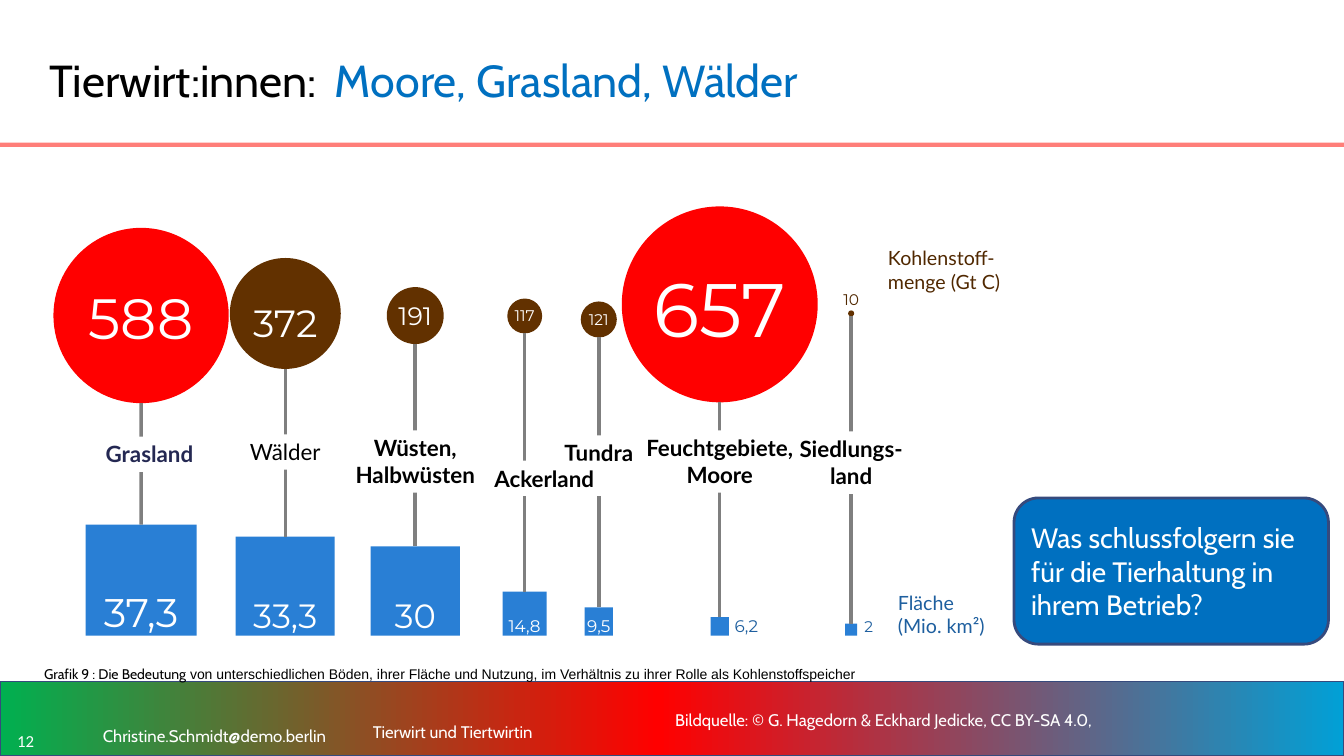
from copy import deepcopy
from dataclasses import dataclass

from lxml import etree
from pptx import Presentation
from pptx import util as u
from pptx.dml import color as dml
from pptx.enum import shapes, text
from pptx.oxml import ns

COLORS = {
    "black": "000000", "white": "FFFFFF", "navy": "242852", "outline": "364A7D",
    "blue": "0070C0", "rule": "FF7E79", "highlight": "FF0000", "brown": "623100",
    "dark_brown": "502800", "area": "297FD5", "area_text": "1E5F9F", "stem": "7F7F7F",
    "green": "00B050", "cyan": "01A0D6",
}
CARBON_SCALE = 0.213
AREA_SCALE = 2.125


@dataclass
class Soil:
    name: str
    carbon: str
    area: str
    x: float
    carbon_y: float
    label_y: float
    label_width: float
    carbon_size: float
    area_size: float
    carbon_shift: float = 0
    label_shift: float = 0
    area_shift: float = 0
    circle: str = "brown"
    label_color: str = "black"
    carbon_color: str = "white"
    area_color: str = "white"
    bold: bool = True


SOILS = [
    Soil("Grasland", "588", "37,3", 62.8, 78.4, 177.4, 90, 40.5, 28.5, carbon_shift=1.5,
         label_shift=6, circle="highlight", label_color="navy"),
    Soil("Wälder", "372", "33,3", 165.8, 76.9, 175.9, 68, 27, 24, carbon_shift=6.5, bold=False),
    Soil("Wüsten,\nHalbwüsten", "191", "30", 258.6, 78.4, 182.7, 90, 18, 24),
    Soil("Tundra", "121", "9,5", 389.7, 81.2, 176.6, 51, 11, 12),
    Soil("Ackerland", "117", "14,8", 336.8, 78.7, 194.6, 81, 11, 12, label_shift=14),
    Soil("Feuchtgebiete,\nMoore", "657", "6,2", 476.1, 70.4, 182.7, 110, 54, 12,
         carbon_shift=3, area_shift=19, circle="highlight", area_color="area_text"),
    Soil("Siedlungs-\nland", "10", "2", 570, 76.9, 183.5, 81, 11, 11, carbon_shift=-9.7,
         area_shift=12.6, carbon_color="dark_brown", area_color="area_text"),
]


def rgb(name):
    return dml.RGBColor.from_string(COLORS[name])


def write(shape, content, font="Cabin", size=12, color="white", bold=False,
          align=text.PP_ALIGN.LEFT, anchor=text.MSO_ANCHOR.TOP,
          insets=(7.2, 3.6, 7.2, 3.6), wrap=True, spacing=None, tab=None):
    frame = shape.text_frame
    frame.word_wrap = wrap
    frame.auto_size = text.MSO_AUTO_SIZE.NONE
    frame.vertical_anchor = anchor
    frame.margin_left, frame.margin_top, frame.margin_right, frame.margin_bottom = map(u.Pt, insets)
    lines = content.split("\n") if isinstance(content, str) else [content]
    for index, line in enumerate(lines):
        paragraph = frame.add_paragraph() if index else frame.paragraphs[0]
        paragraph.alignment = align
        if spacing:
            paragraph.line_spacing = spacing
        if tab:
            properties = paragraph._p.get_or_add_pPr()
            tabs = etree.SubElement(properties, ns.qn("a:tabLst"))
            etree.SubElement(tabs, ns.qn("a:tab"), pos=str(u.Pt(tab)), algn="l")
        for words, changes in [(line, {})] if isinstance(line, str) else line:
            run = paragraph.add_run()
            run.text = words
            run.font.name = changes.get("font", font)
            run.font.size = u.Pt(size)
            run.font.bold = bold
            run.font.color.rgb = rgb(changes.get("color", color))


def add_text(slide, box, content, **formatting):
    shape = slide.shapes.add_textbox(*map(u.Pt, box))
    write(shape, content, **formatting)


def add_block(slide, kind, box, fill, line=None, line_width=1):
    shape = slide.shapes.add_shape(kind, *map(u.Pt, box))
    shape.shadow.inherit = False
    if fill:
        shape.fill.solid()
        shape.fill.fore_color.rgb = rgb(fill)
    if line:
        shape.line.color.rgb = rgb(line)
        shape.line.width = u.Pt(line_width)
    else:
        shape.line.fill.background()
    return shape


def add_header(slide, box):
    left, top, width, height = box
    title = slide.shapes.title
    title.left, title.top, title.width, title.height = map(u.Pt, (left + 28, top + 14.4, 684.7, 85))
    write(title, [("Tierwirt:innen:\t", {}), ("Moore, Grasland, Wälder", {"color": "blue"})],
          size=32, color="black", anchor=text.MSO_ANCHOR.MIDDLE, tab=204)
    add_block(slide, shapes.MSO_SHAPE.RECTANGLE, (left, top + height - 3, width, 3), "rule")


def add_footer(slide, box):
    left, top, width, height = box
    band = add_block(slide, shapes.MSO_SHAPE.RECTANGLE, box, None, "outline")
    band.fill.gradient()
    band.fill.gradient_angle = 0
    stops = band._element.spPr.find(ns.qn("a:gradFill")).find(ns.qn("a:gsLst"))
    stops.append(deepcopy(stops[0]))
    gradient = [(0, "green"), (0.49, "highlight"), (1, "cyan")]
    for stop, (position, color) in zip(band.fill.gradient_stops, gradient):
        stop.position = position
        stop.color.rgb = rgb(color)
    middle = text.MSO_ANCHOR.MIDDLE
    add_text(slide, (left - 0.7, top + 33.1, 38, 19.4), "12", font="Calibri",
             align=text.PP_ALIGN.CENTER, anchor=middle, insets=(0, 3.6, 0, 3.6))
    add_text(slide, (left + 62, top + 25.9, 190, 27.4), "Christine.Schmidt@demo.berlin",
             insets=(11.5, 7.2, 7.2, 7.2), spacing=0.9)
    add_text(slide, (left + 259.2, top + 23.1, 200, 25.2), "Tierwirt und Tiertwirtin",
             anchor=middle)
    add_text(slide, (left + 475.2, top + 15.1, 480, 27.4),
             "Bildquelle: © G. Hagedorn & Eckhard Jedicke, CC BY-SA 4.0,", spacing=1.1)


def add_stem(slide, x, start, square):
    stem = slide.shapes.add_connector(shapes.MSO_CONNECTOR.STRAIGHT, u.Pt(x), u.Pt(start),
                                      u.Pt(x), square.top)
    stem.end_connect(square, 0)
    stem.line.color.rgb = rgb("stem")
    stem.line.width = u.Pt(2.5)
    etree.SubElement(stem._element.spPr, ns.qn("a:effectLst"))


def add_number(slide, x, bottom, number, size, color, bottom_inset):
    width = 0.62 * size * len(number) + 14.4
    height = 1.22 * size + 3.6 + bottom_inset
    add_text(slide, (x - width / 2, bottom - height, width, height), number,
             font="Montserrat", size=size, color=color, align=text.PP_ALIGN.CENTER,
             insets=(7.2, 3.6, 7.2, bottom_inset), wrap=False)


def add_soil(slide, box, soil):
    left, top, width, height = box
    x, center, baseline = left + soil.x, top + soil.carbon_y, top + height
    diameter = max(CARBON_SCALE * float(soil.carbon), 4.3)
    side = max(AREA_SCALE * float(soil.area.replace(",", ".")), 8.6)
    add_block(slide, shapes.MSO_SHAPE.OVAL,
              (x - diameter / 2, center - diameter / 2, diameter, diameter), soil.circle)
    square = add_block(slide, shapes.MSO_SHAPE.RECTANGLE,
                       (x - side / 2, baseline - side, side, side), "area")
    add_stem(slide, x, center + diameter / 2, square)
    label_height = 19.4 * len(soil.name.split("\n")) + 5.8
    label = add_block(slide, shapes.MSO_SHAPE.RECTANGLE,
                      (x + soil.label_shift - soil.label_width / 2,
                       top + soil.label_y - label_height / 2,
                       soil.label_width, label_height), "white")
    write(label, soil.name, font="Lato", size=16, color=soil.label_color, bold=soil.bold,
          align=text.PP_ALIGN.CENTER, insets=(0, 2.9, 0, 2.9), wrap=False)
    number_bottom = center + soil.carbon_shift + 0.61 * soil.carbon_size + 3.6
    add_number(slide, x, number_bottom, soil.carbon, soil.carbon_size, soil.carbon_color, 3.6)
    add_number(slide, x + soil.area_shift, baseline + 0.5, soil.area, soil.area_size,
               soil.area_color, 0)


def add_soil_chart(slide, box):
    for soil in SOILS:
        add_soil(slide, box, soil)


def add_legend(slide, box):
    left, top, width, height = box
    add_text(slide, (left, top, width, 34), "Kohlenstoff-\nmenge (Gt C)", font="Lato", size=14,
             color="dark_brown", insets=(0, 0, 0, 0))
    add_text(slide, (left, top + height - 41, width, 41), "Fläche\n(Mio. km²)", font="Lato",
             size=14, color="area_text")


def add_caption(slide, box):
    add_text(slide, box, [
        ("Grafik 9 : Die Bedeutung", {}),
        (" von unterschiedlichen Böden, ihrer Fläche und Nutzung, im Verhältnis zu ihrer Rolle "
         "als Kohlenstoffspeicher", {"font": "Arial"}),
    ], size=10, color="black")


def add_question(slide, box):
    question = add_block(slide, shapes.MSO_SHAPE.ROUNDED_RECTANGLE, box, "blue", "outline", 2)
    write(question, "Was schlussfolgern sie für die Tierhaltung in ihrem Betrieb?", size=20,
          anchor=text.MSO_ANCHOR.MIDDLE)


def main():
    presentation = Presentation()
    presentation.slide_width, presentation.slide_height = u.Pt(960), u.Pt(540)
    slide = presentation.slides.add_slide(presentation.slide_layouts[5])
    add_header(slide, (0, 0, 960, 105))
    add_footer(slide, (0, 486.7, 960, 53.3))
    add_soil_chart(slide, (38, 147, 611, 307))
    add_legend(slide, (634.3, 175.7, 89, 283.6))
    add_question(slide, (724.3, 355.7, 224.6, 104.4))
    add_caption(slide, (24.5, 471.6, 653, 19.4))
    presentation.save("out.pptx")


if __name__ == "__main__":
    main()
